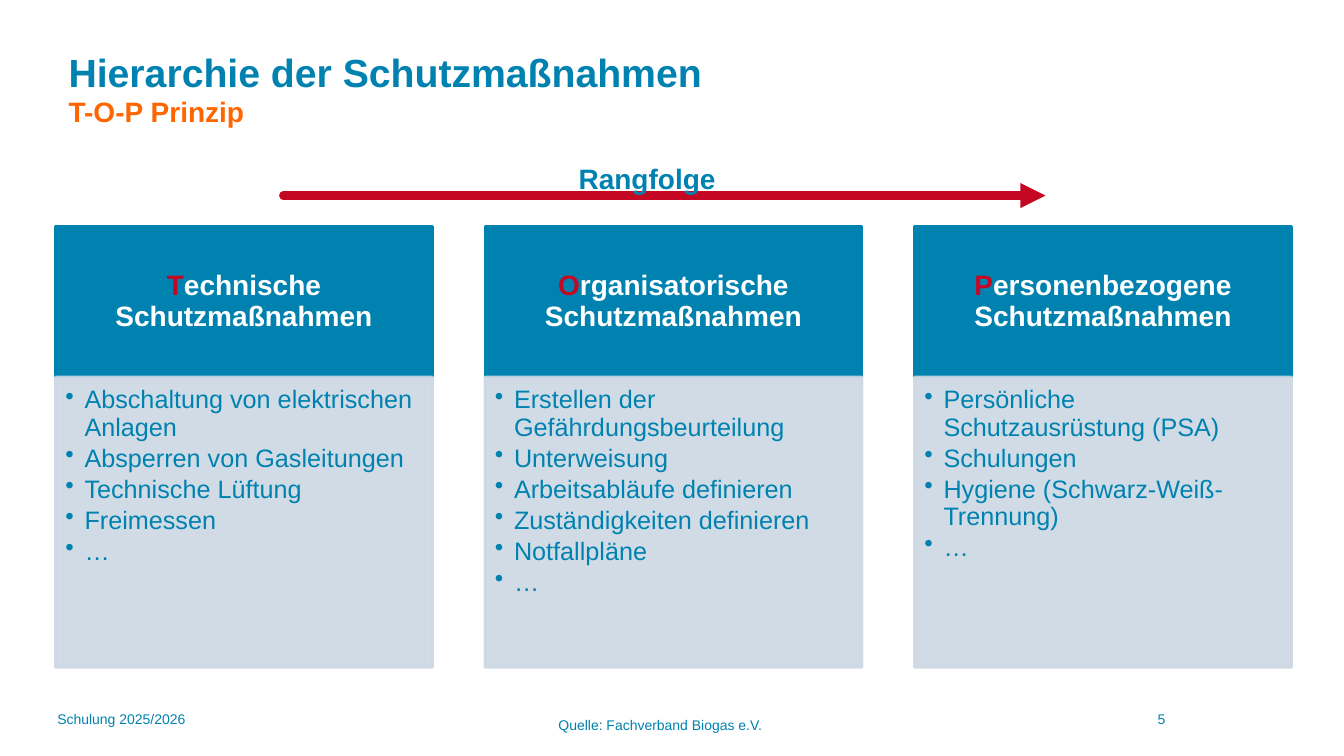
import pptx
import pptx.dml.color
import pptx.enum.shapes
import pptx.enum.text
import pptx.oxml
import pptx.oxml.ns
import pptx.util
from pptx.util import Inches

BLUE, RED, ORANGE, GREY, WHITE = "0082B0", "C40823", "FF6600", "CCD8E4", "FFFFFF"
ANCHOR = pptx.enum.text.MSO_ANCHOR
ALIGN = pptx.enum.text.PP_ALIGN

MEASURES = [
    ("Technische Schutzmaßnahmen",
     ["Abschaltung von elektrischen Anlagen", "Absperren von Gasleitungen",
      "Technische Lüftung", "Freimessen", "…"]),
    ("Organisatorische Schutzmaßnahmen",
     ["Erstellen der Gefährdungsbeurteilung", "Unterweisung",
      "Arbeitsabläufe definieren", "Zuständigkeiten definieren",
      "Notfallpläne", "…"]),
    ("Personenbezogene Schutzmaßnahmen",
     ["Persönliche Schutzausrüstung (PSA)", "Schulungen",
      "Hygiene (Schwarz-Weiß-Trennung)", "…"]),
]


def color(hex_string):
    return pptx.dml.color.RGBColor.from_string(hex_string)


def element(tag, **attributes):
    node = pptx.oxml.parse_xml(f"<{tag} {pptx.oxml.ns.nsdecls('a')}/>")
    for name, value in attributes.items():
        node.set(name, value)
    return node


def style(font, size, hex_string, bold=False):
    font.name = "Arial"
    font.size = pptx.util.Pt(size)
    font.bold = bold
    font.color.rgb = color(hex_string)


def set_margins(frame, left, top, right, bottom):
    frame.margin_left, frame.margin_top = Inches(left), Inches(top)
    frame.margin_right, frame.margin_bottom = Inches(right), Inches(bottom)


def add_title(slide, left, top, width, height):
    title = slide.shapes.title
    title.left, title.top = Inches(left), Inches(top)
    title.width, title.height = Inches(width), Inches(height)
    frame = title.text_frame
    frame.text = "Hierarchie der Schutzmaßnahmen\vT-O-P Prinzip"
    frame.auto_size = pptx.enum.text.MSO_AUTO_SIZE.NONE
    frame.vertical_anchor = ANCHOR.MIDDLE
    para = frame.paragraphs[0]
    para.alignment = ALIGN.LEFT
    heading, subtitle = para.runs
    style(heading.font, 28, BLUE, bold=True)
    style(subtitle.font, 20, ORANGE, bold=True)


def add_label(slide, text, left, top, width, height, size=10, bold=False,
              align=ALIGN.LEFT, wrap=True):
    box = slide.shapes.add_textbox(Inches(left), Inches(top),
                                   Inches(width), Inches(height))
    box.text_frame.word_wrap = wrap
    box.text_frame.text = text
    para = box.text_frame.paragraphs[0]
    para.alignment = align
    style(para.runs[0].font, size, BLUE, bold)


def add_panel(slide, hex_string, left, top, width, height):
    panel = slide.shapes.add_shape(
        pptx.enum.shapes.MSO_SHAPE.RECTANGLE,
        Inches(left), Inches(top), Inches(width), Inches(height))
    panel.shadow.inherit = False
    panel.fill.solid()
    panel.fill.fore_color.rgb = color(hex_string)
    panel.line.color.rgb = color(hex_string)
    panel.line.width = pptx.util.Pt(2)
    panel.text_frame.word_wrap = True
    return panel


def add_header(slide, text, left, top, width, height):
    """Coloured header whose first letter is picked out in red."""
    frame = add_panel(slide, BLUE, left, top, width, height).text_frame
    set_margins(frame, 0.16, 0.09, 0.16, 0.09)
    frame.vertical_anchor = ANCHOR.MIDDLE
    para = frame.paragraphs[0]
    para.alignment = ALIGN.CENTER
    para.line_spacing = 0.9
    para.space_after = pptx.util.Pt(7)
    for part, hex_string in ((text[0], RED), (text[1:], WHITE)):
        span = para.add_run()
        span.text = part
        style(span.font, 20, hex_string, bold=True)


def add_list(slide, items, left, top, width, height):
    panel = add_panel(slide, GREY, left, top, width, height)
    for tint in panel._element.spPr.iter(pptx.oxml.ns.qn("a:srgbClr")):
        tint.append(element("a:alpha", val="90000"))
    frame = panel.text_frame
    set_margins(frame, 0.1, 0.1, 0.14, 0.16)
    frame.vertical_anchor = ANCHOR.TOP
    frame.text = "\n".join(items)
    indent = Inches(0.19)
    for para in frame.paragraphs:
        properties = para._p.get_or_add_pPr()
        properties.set("marL", str(indent))
        properties.set("indent", str(-indent))
        properties.append(element("a:buChar", char="•"))
        para.alignment = ALIGN.LEFT
        para.line_spacing = 0.9
        para.space_after = pptx.util.Pt(2.7)
        style(para.runs[0].font, 18, BLUE)


def add_columns(slide, left, top, width, height, column_width=3.74,
                header_height=1.49):
    pitch = (width - column_width) / (len(MEASURES) - 1)
    for index, (header, items) in enumerate(MEASURES):
        column_left = left + index * pitch
        add_header(slide, header, column_left, top, column_width, header_height)
        add_list(slide, items, column_left, top + header_height,
                 column_width, height - header_height)


def add_ranking_arrow(slide, left, top, width):
    arrow = slide.shapes.add_connector(
        pptx.enum.shapes.MSO_CONNECTOR.STRAIGHT,
        Inches(left), Inches(top), Inches(left + width), Inches(top))
    arrow.line.color.rgb = color(RED)
    arrow.line.width = pptx.util.Pt(6)
    outline = arrow.line._get_or_add_ln()
    outline.set("cap", "rnd")
    outline.append(element("a:tailEnd", type="triangle"))
    arrow._element.spPr.append(element("a:effectLst"))
    add_label(slide, "Rangfolge", left + 2.83, top - 0.39, 3.86, 0.44,
              size=20, bold=True)


def add_footer(slide, top):
    add_label(slide, "Schulung 2025/2026", 0.47, top, 3.25, 0.5)
    add_label(slide, "Quelle: Fachverband Biogas e.V.", 5.44, top + 0.06,
              2.25, 0.27, wrap=False)
    add_label(slide, "5", 10.13, top, 2.78, 0.5, align=ALIGN.CENTER)


def main():
    deck = pptx.Presentation()
    deck.slide_width, deck.slide_height = Inches(13.33), Inches(7.5)
    slide = deck.slides.add_slide(deck.slide_layouts.get_by_name("Title Only"))
    add_title(slide, 0.58, 0.25, 8.5, 1.25)
    add_columns(slide, 0.55, 2.25, 12.26, 4.37)
    add_ranking_arrow(slide, 2.81, 1.94, 7.56)
    add_footer(slide, 7)
    deck.save("out.pptx")


if __name__ == "__main__":
    main()
